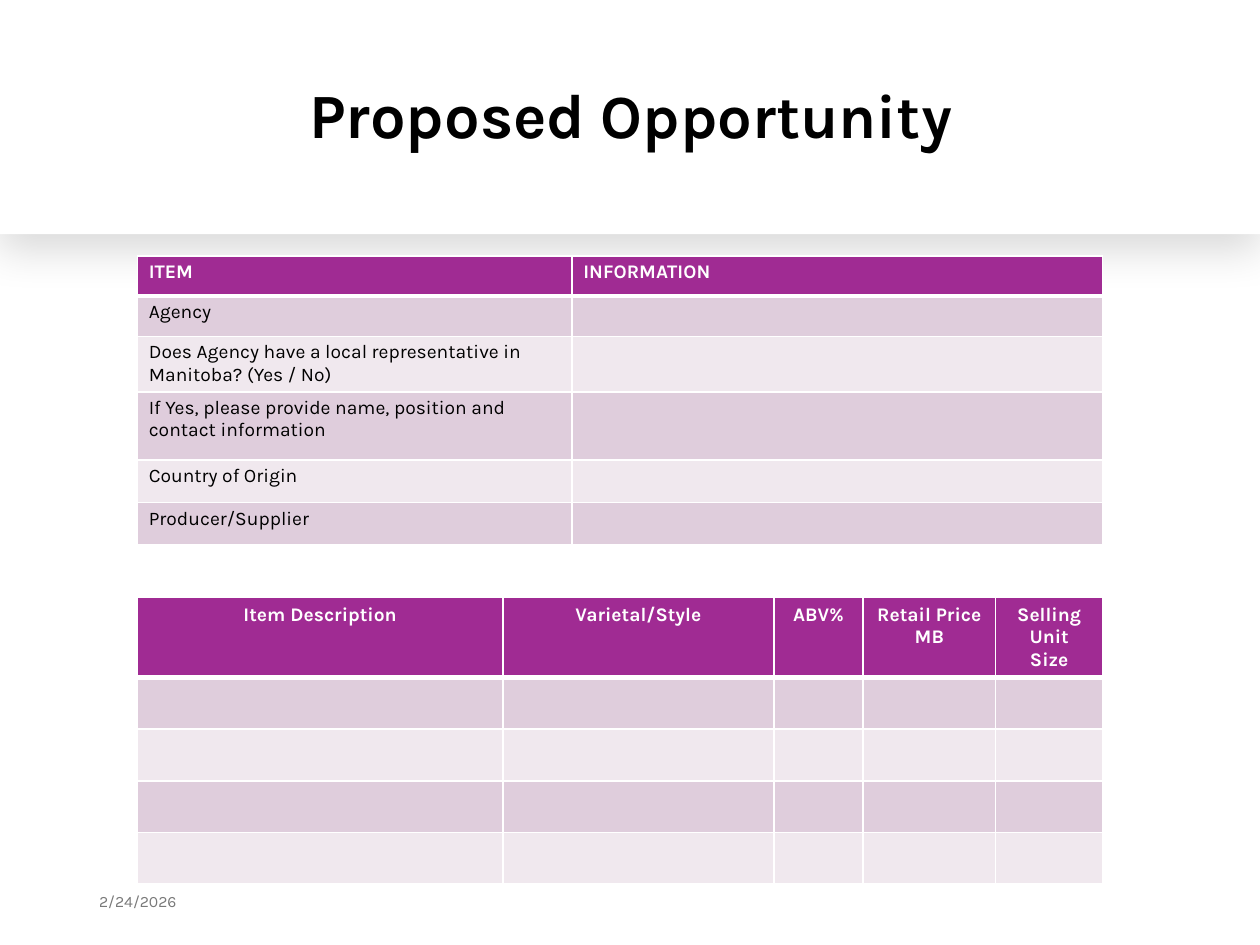
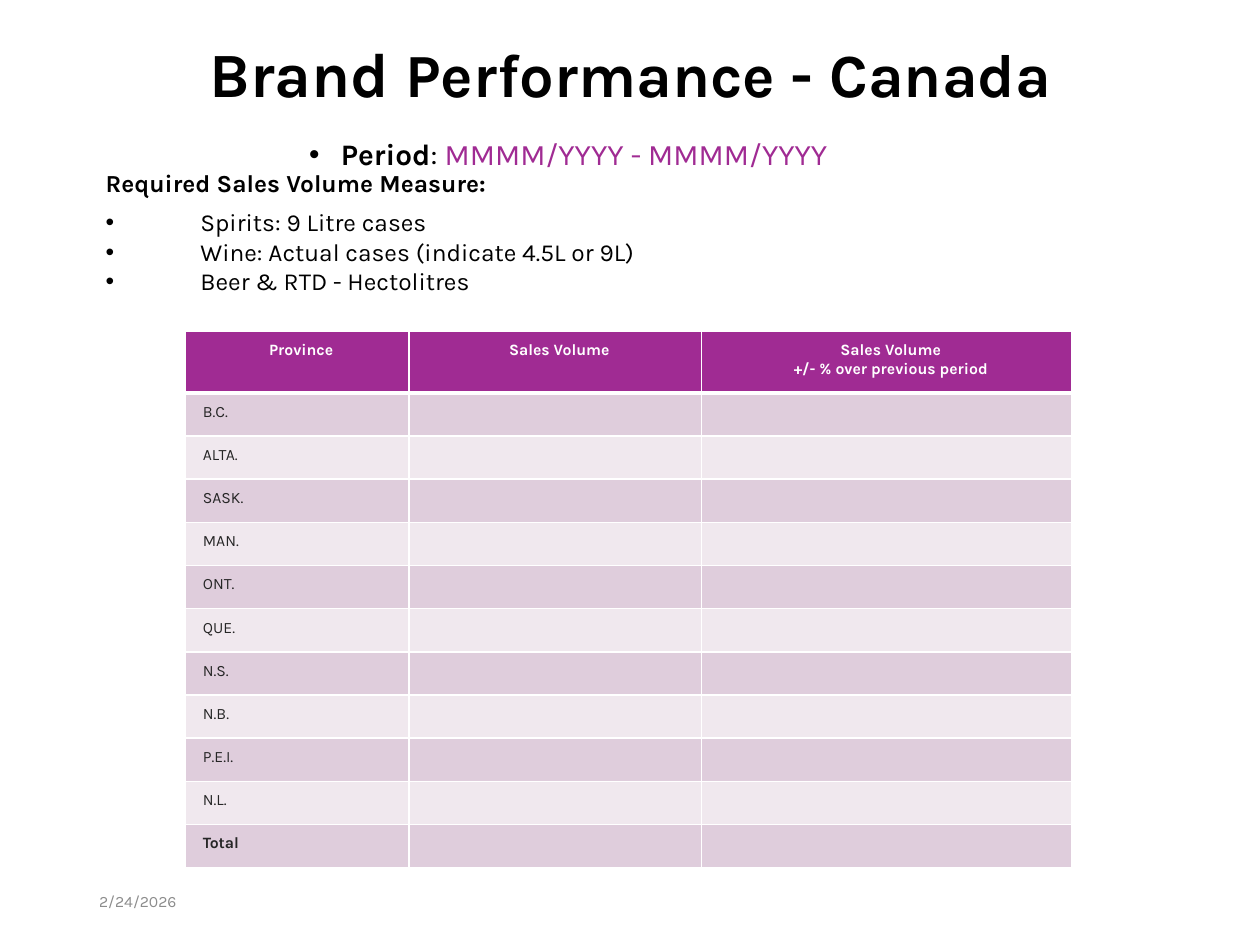
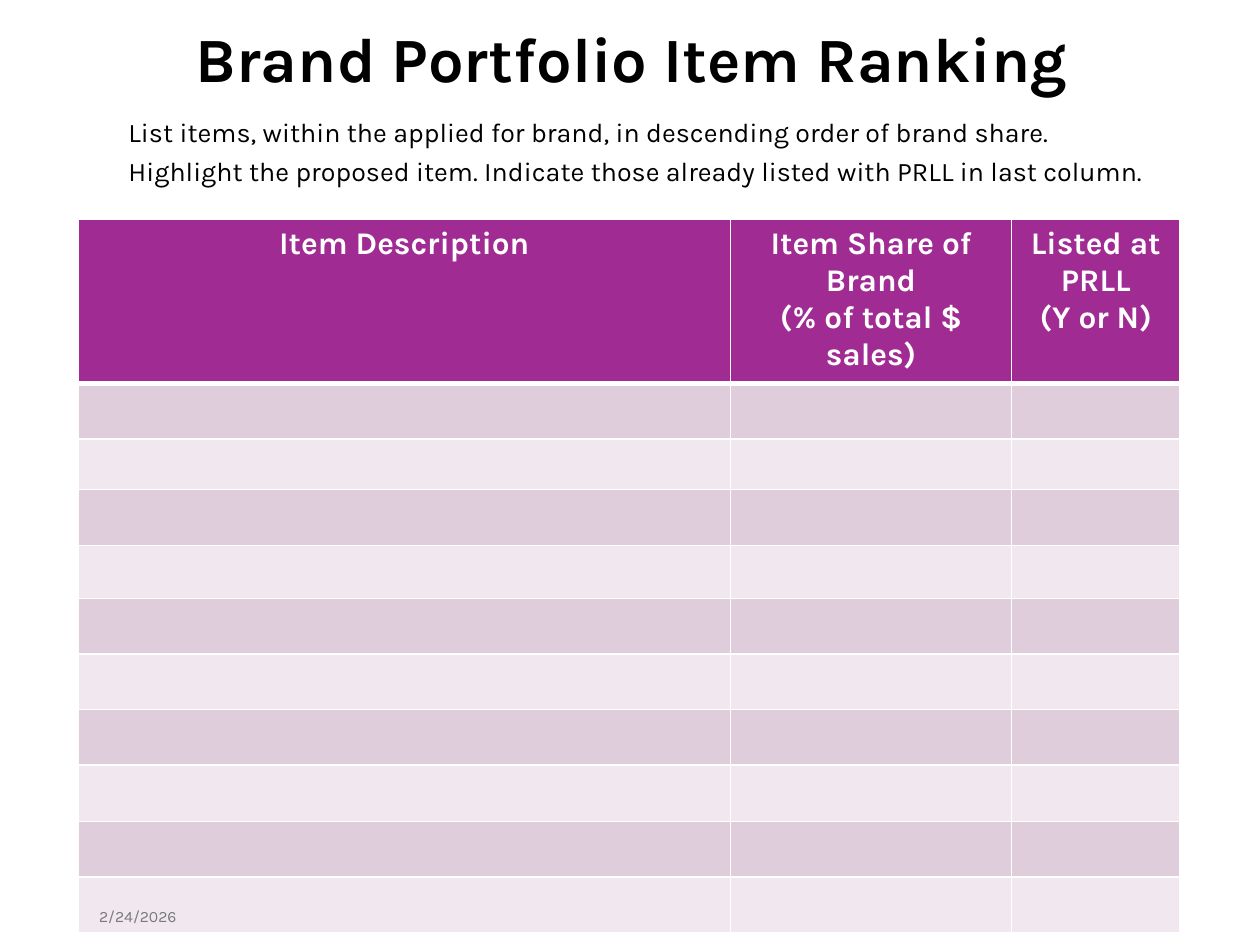
from dataclasses import dataclass
from typing import Any, NamedTuple

from lxml.etree import SubElement
from pptx import Presentation
from pptx.dml.color import RGBColor
from pptx.enum.shapes import MSO_SHAPE as Preset
from pptx.enum.text import MSO_ANCHOR as Anchor, MSO_AUTO_SIZE as AutoSize, PP_ALIGN as Align
from pptx.oxml.ns import qn
from pptx.util import Cm, Pt


@dataclass(frozen=True)
class Theme:
    font: str = "Karla"
    white: str = "FFFFFF"
    black: str = "000000"
    purple: str = "A02B93"
    dark_band: str = "DFCDDC"
    light_band: str = "F0E8EE"
    province: str = "262626"
    grey: str = "797979"
    light_grey: str = "8C8C8C"
    title: float = 36
    title_end: float = 35
    period: float = 17
    guidance: float = 15.3
    measure: float = 14
    date: float = 9
    form: float = 11
    provinces: float = 9
    ranking: float = 18
    rule: float = 1
    header_rule: float = 3


THEME = Theme()


class Box(NamedTuple):
    left: float
    top: float
    width: float
    height: float


class Piece(NamedTuple):
    text: str
    size: float
    color: str = THEME.black
    bold: bool = False


class Line(NamedTuple):
    pieces: list[Piece]
    format: dict[str, Any] = {}
    bullet: tuple[float, float] | None = None


@dataclass(frozen=True)
class Grid:
    left: float
    top: float
    columns: list[float]
    rows: list[float]
    headers: list[str]
    size: float
    header_align: Align = Align.CENTER
    labels: tuple[str, ...] = ()
    label_color: str = THEME.black
    bold_labels: tuple[str, ...] = ()
    margins: tuple[float, float, float, float] = (0.25, 0.13, 0.25, 0.13)


def apply(target: Any, values: dict[str, Any]) -> None:
    for name, value in values.items():
        setattr(target, name, value)


def place(shape: Any, box: Box) -> None:
    apply(shape, {name: Cm(value) for name, value in box._asdict().items()})


def add_bullet(paragraph: Any, margin: float, indent: float) -> None:
    properties = paragraph._p.get_or_add_pPr()
    properties.set("marL", str(Cm(margin)))
    properties.set("indent", str(Cm(indent)))
    SubElement(properties, qn("a:buFont"), typeface="Arial")
    SubElement(properties, qn("a:buChar"), char="•")


def write_lines(frame: Any, lines: list[Line]) -> None:
    for index, line in enumerate(lines):
        paragraph = frame.paragraphs[0] if index == 0 else frame.add_paragraph()
        if line.bullet:
            add_bullet(paragraph, *line.bullet)
        apply(paragraph, line.format)
        for piece in line.pieces:
            run = paragraph.add_run()
            run.text = piece.text
            apply(run.font, {"name": THEME.font, "size": Pt(piece.size), "bold": piece.bold})
            run.font.color.rgb = RGBColor.from_string(piece.color)


def add_slide(presentation: Any, box: Box, pieces: list[Piece]) -> Any:
    slide = presentation.slides.add_slide(presentation.slide_layouts[5])
    title = slide.shapes.title
    place(title, box)
    apply(title.text_frame, {
        "vertical_anchor": Anchor.MIDDLE, "word_wrap": True, "auto_size": AutoSize.NONE,
    })
    write_lines(title.text_frame, [Line(pieces, {"alignment": Align.CENTER, "line_spacing": 0.9})])
    return slide


def heading(text: str, size: float = THEME.title) -> Piece:
    return Piece(text, size, bold=True)


def add_text(slide: Any, box: Box, lines: list[Line], **frame_format: Any) -> None:
    shape = slide.shapes.add_textbox(*map(Cm, box))
    apply(shape.text_frame, {"word_wrap": True, "vertical_anchor": Anchor.MIDDLE, **frame_format})
    write_lines(shape.text_frame, lines)


def add_date(slide: Any, color: str = THEME.grey, top: float = 17.65, height: float = 1.02) -> None:
    add_text(slide, Box(1.75, top, 5.72, height), [Line([Piece("2/24/2026", THEME.date, color)])])


def add_title_band(slide: Any) -> None:
    band = slide.shapes.add_shape(Preset.RECTANGLE, *map(Cm, Box(0, 0, 25.4, 4.72)))
    band.fill.solid()
    band.fill.fore_color.rgb = RGBColor.from_string(THEME.white)
    band.line.fill.background()
    band.shadow.inherit = False
    effects = band.element.spPr.find(qn("a:effectLst"))
    shadow = SubElement(effects, qn("a:outerShdw"), blurRad=str(Pt(24)), dist=str(Pt(9)),
                        dir=str(91 * 60000), algn="t", rotWithShape="0")
    color = SubElement(shadow, qn("a:srgbClr"), val=THEME.black)
    SubElement(color, qn("a:alpha"), val="14000")
    slide.shapes.title.element.addprevious(band.element)


def draw_borders(cell: Any, row: int) -> None:
    properties = cell._tc.get_or_add_tcPr()
    widths = {side: THEME.rule for side in ("lnL", "lnR", "lnT", "lnB")}
    if row == 0:
        widths["lnB"] = THEME.header_rule
    elif row == 1:
        widths["lnT"] = THEME.header_rule
    for side, width in widths.items():
        line = SubElement(properties, qn(f"a:{side}"), w=str(Pt(width)))
        fill = SubElement(line, qn("a:solidFill"))
        SubElement(fill, qn("a:srgbClr"), val=THEME.white)


def fill_cell(cell: Any, grid: Grid, row: int, column: int) -> None:
    sides = ("margin_left", "margin_top", "margin_right", "margin_bottom")
    apply(cell, dict(zip(sides, map(Cm, grid.margins))))
    draw_borders(cell, row)
    cell.fill.solid()
    band = THEME.dark_band if row % 2 else THEME.light_band
    cell.fill.fore_color.rgb = RGBColor.from_string(band if row else THEME.purple)
    if row == 0:
        write_lines(cell.text_frame, [
            Line([Piece(text, grid.size, THEME.white, True)], {"alignment": grid.header_align})
            for text in grid.headers[column].split("\n")
        ])
    elif column == 0 and grid.labels:
        label = grid.labels[row - 1]
        piece = Piece(label, grid.size, grid.label_color, label in grid.bold_labels)
        write_lines(cell.text_frame, [Line([piece])])
    else:
        paragraph = cell.text_frame.paragraphs[0]
        end = SubElement(paragraph._p, qn("a:endParaRPr"), sz=str(round(grid.size * 100)))
        SubElement(end, qn("a:latin"), typeface=THEME.font)


def add_grid(slide: Any, grid: Grid) -> None:
    box = Box(grid.left, grid.top, sum(grid.columns), sum(grid.rows))
    table = slide.shapes.add_table(len(grid.rows), len(grid.columns), *map(Cm, box)).table
    for column, width in zip(table.columns, grid.columns):
        column.width = Cm(width)
    for row, height in zip(table.rows, grid.rows):
        row.height = Cm(height)
    for row in range(len(grid.rows)):
        for column in range(len(grid.columns)):
            fill_cell(table.cell(row, column), grid, row, column)


def build_opportunity(presentation: Any) -> None:
    slide = add_slide(presentation, Box(2.39, 0.76, 20.65, 3.23),
                      [heading("Proposed"), heading(" Opportunity", THEME.title_end)])
    add_title_band(slide)
    add_grid(slide, Grid(
        2.77, 5.16, [8.76, 10.69], [0.81, 0.81, 1.12, 1.37, 0.86, 0.86],
        ["ITEM", "INFORMATION"], THEME.form, Align.LEFT,
        labels=(
            "Agency",
            "Does Agency have a local representative in Manitoba? (Yes / No)",
            "If Yes, please provide name, position and contact information",
            "Country of Origin",
            "Producer/Supplier",
        ),
        margins=(0.23, 0.1, 0.23, 0.1),
    ))
    add_grid(slide, Grid(
        2.77, 12.04, [7.37, 5.46, 1.8, 2.67, 2.16], [1.14] + [1.04] * 4,
        ["Item Description", "Varietal/Style", "ABV%", "Retail Price MB", "Selling Unit Size"],
        THEME.form,
    ))
    add_date(slide)


def build_performance(presentation: Any) -> None:
    slide = add_slide(presentation, Box(2.11, 0.48, 21.21, 2.16),
                      [heading("Brand"), heading(" Performance - Canada", THEME.title_end)])
    add_text(slide, Box(1.07, 2.29, 21.21, 1.7), [Line(
        [
            heading("Period", THEME.period),
            Piece(": ", THEME.period),
            Piece("MMMM/YYYY - MMMM/YYYY", THEME.period, THEME.purple),
        ],
        {"alignment": Align.CENTER, "line_spacing": 0.9, "space_after": Pt(6)},
        (0, -0.64),
    )])
    measures = ("Spirits: 9 Litre cases", "Wine: Actual cases (indicate 4.5L or 9L)",
                "Beer & RTD - Hectolitres")
    add_text(slide, Box(1.88, 4.11, 21.21, 1.7), [
        Line([heading("Required Sales Volume Measure:", THEME.measure)],
             {"line_spacing": 0.7, "space_after": Pt(6)}),
        *(Line([Piece(text, THEME.measure)], bullet=(1.91, -1.91)) for text in measures),
    ], margin_bottom=Cm(0.53))
    provinces = ("B.C.", "ALTA.", "SASK.", "MAN.", "ONT.", "QUE.",
                 "N.S.", "N.B.", "P.E.I.", "N.L.", "Total")
    add_grid(slide, Grid(
        3.73, 6.68, [4.52, 5.89, 7.47], [1.24] + [0.87] * len(provinces),
        ["Province", "Sales Volume", "Sales Volume\n+/- % over previous period"],
        THEME.provinces, labels=provinces, label_color=THEME.province,
        bold_labels=("Total",), margins=(0.36, 0.2, 0.2, 0.2),
    ))
    add_date(slide, THEME.light_grey)


def build_ranking(presentation: Any) -> None:
    slide = add_slide(presentation, Box(1.3, 0.41, 22.86, 1.7),
                      [heading("Brand Portfolio Item Ranking")])
    guidance = (
        "List items, within the applied for brand, in descending order of brand share.",
        "Highlight the proposed item. Indicate those already listed with PRLL in last column.",
    )
    add_text(slide, Box(2.34, 2.34, 21.49, 1.7), [
        Line([Piece(text, THEME.guidance)],
             {"line_spacing": 0.8, "space_before": Pt(7.5 if index else 0)})
        for index, text in enumerate(guidance)
    ], vertical_anchor=Anchor.TOP)
    add_grid(slide, Grid(
        1.57, 4.42, [13.16, 5.66, 3.4],
        [2.06, 1.12, 0.66, 1.12, 1.07, 1.12, 1.12, 1.12, 1.14, 1.12, 1.12],
        ["Item Description", "Item Share of Brand\n(% of total $ sales)",
         "Listed at PRLL\n(Y or N)"],
        THEME.ranking,
    ))
    add_date(slide, top=18.29, height=0.38)


def main() -> None:
    presentation = Presentation()
    apply(presentation, {"slide_width": Cm(25.4), "slide_height": Cm(19.05)})
    for build in (build_opportunity, build_performance, build_ranking):
        build(presentation)
    presentation.save("out.pptx")


if __name__ == "__main__":
    main()
